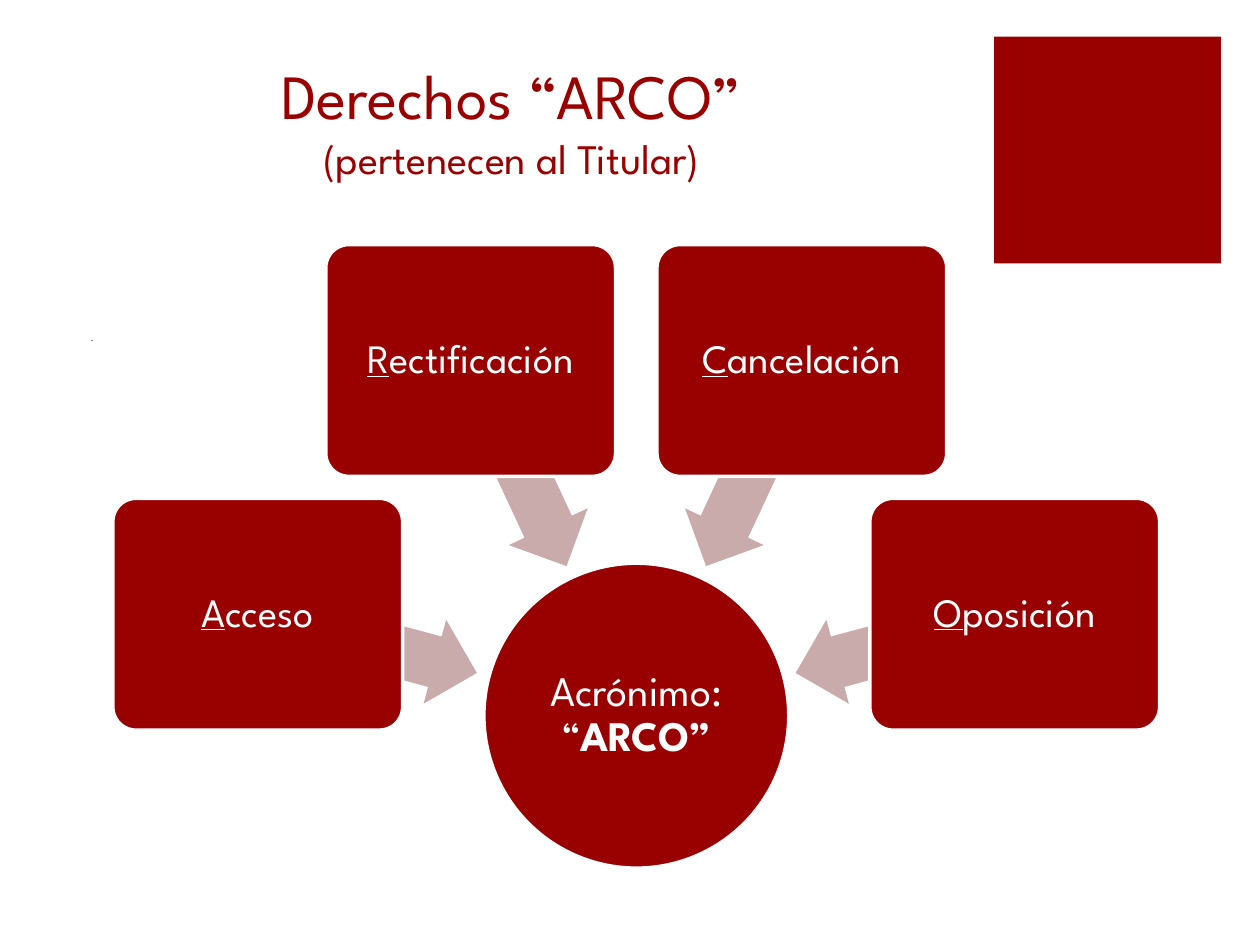
import math

import pptx
import pptx.dml.color
import pptx.enum.shapes
import pptx.enum.text
import pptx.util
from lxml import etree
from pptx.util import Inches

FONT = "League Spartan"
RED, PINK, WHITE, GREY = "990000", "CAABAB", "FFFFFF", "333333"
SHAPE = pptx.enum.shapes.MSO_SHAPE
ALIGN = pptx.enum.text.PP_ALIGN
ANCHOR = pptx.enum.text.MSO_ANCHOR

TITLE, SUBTITLE = "Derechos “ARCO”", "(pertenecen al Titular)"
HUB_LABEL, ACRONYM = "Acrónimo: “", "ARCO”"
# Name of each right and its angle around the hub, clockwise from the left
RIGHTS = [("Acceso", 15), ("Rectificación", 65),
          ("Cancelación", 115), ("Oposición", 165)]

HUB_X, HUB_Y, HUB_SIZE = 5.05, 5.68, 2.42
BOX_W, BOX_H, BOX_RADIUS = 2.3, 1.84, 3.11
ARROW_W, ARROW_H, ARROW_RADIUS = 1.8, 0.69, 2.21


def color(value):
    return pptx.dml.color.RGBColor.from_string(value)


def add_run(p, text, size=23, fill=WHITE, bold=False, underline=False):
    r = p.add_run()
    r.text = text
    r.font.name, r.font.size = FONT, pptx.util.Pt(size)
    r.font.bold, r.font.underline = bold, underline
    r.font.color.rgb = color(fill)


def add_centred(s, kind, cx, cy, w, h, fill, outlined=False):
    """Add a shape around its centre point."""
    sp = s.shapes.add_shape(kind, Inches(cx - w / 2), Inches(cy - h / 2),
                            Inches(w), Inches(h))
    sp.shadow.inherit = False
    sp.fill.solid()
    sp.fill.fore_color.rgb = color(fill)
    if outlined:
        sp.line.color.rgb = color(WHITE)
        sp.line.width = pptx.util.Pt(2)
    else:
        sp.line.fill.background()
    return sp


def label_paragraph(sp, inset):
    tf = sp.text_frame
    tf.word_wrap = True
    tf.vertical_anchor = ANCHOR.MIDDLE
    tf.margin_left = tf.margin_right = Inches(inset)
    tf.margin_top = tf.margin_bottom = Inches(inset)
    p = tf.paragraphs[0]
    p.alignment, p.line_spacing = ALIGN.CENTER, 0.9
    return p


def place(sp, x, y, w, h):
    sp.left, sp.top, sp.width, sp.height = map(Inches, (x, y, w, h))


def around_hub(angle, radius):
    a = math.radians(angle)
    return HUB_X - radius * math.cos(a), HUB_Y - radius * math.sin(a)


def main():
    prs = pptx.Presentation()
    prs.slide_width, prs.slide_height = Inches(10), Inches(7.5)
    s = prs.slides.add_slide(prs.slide_layouts[1])

    add_centred(s, SHAPE.RECTANGLE, 8.79, 1.19, 1.8, 1.8, RED)

    title, body = s.shapes.title, s.placeholders[1]
    place(title, 0.5, 0.25, 7.12, 1.25)
    title.text_frame.vertical_anchor = ANCHOR.BOTTOM
    p = title.text_frame.paragraphs[0]
    p.alignment = ALIGN.CENTER
    add_run(p, TITLE, size=36, fill=RED)
    p.add_line_break()
    add_run(p, SUBTITLE, size=24, fill=RED)

    place(body, 0.5, 2.58, 7.12, 4.28)
    p = body.text_frame.paragraphs[0]
    p.space_before = pptx.util.Pt(0)
    pPr = p._p.get_or_add_pPr()
    pPr.set("marL", str(Inches(0.12)))
    pPr.set("indent", "0")
    etree.SubElement(pPr, pptx.oxml.ns.qn("a:buNone"))
    add_run(p, ".", size=6, fill=GREY)

    hub = add_centred(s, SHAPE.OVAL, HUB_X, HUB_Y, HUB_SIZE, HUB_SIZE, RED, outlined=True)
    p = label_paragraph(hub, 0.02)
    add_run(p, HUB_LABEL, size=24)
    add_run(p, ACRONYM, size=24, bold=True)

    for name, angle in RIGHTS:
        arrow = add_centred(s, SHAPE.LEFT_ARROW, *around_hub(angle, ARROW_RADIUS),
                            ARROW_W, ARROW_H, PINK)
        arrow.adjustments[0], arrow.adjustments[1] = 0.6, 0.5
        arrow.rotation = 180 + angle

        box = add_centred(s, SHAPE.ROUNDED_RECTANGLE, *around_hub(angle, BOX_RADIUS),
                          BOX_W, BOX_H, RED, outlined=True)
        box.adjustments[0] = 0.1
        p = label_paragraph(box, 0.05)
        add_run(p, name[0], underline=True)
        add_run(p, name[1:])

    prs.save("out.pptx")


if __name__ == "__main__":
    main()
